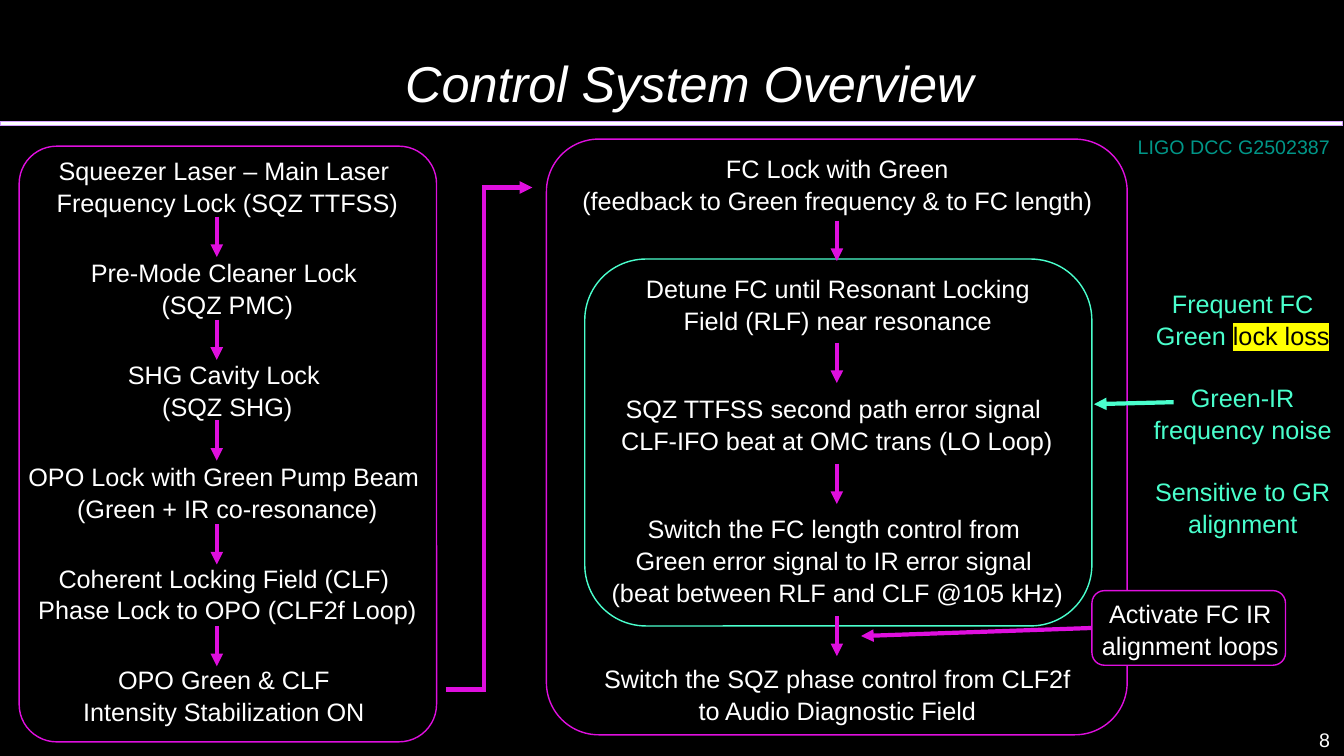
from dataclasses import dataclass

from lxml import etree
from pptx import Presentation
from pptx.dml.color import RGBColor
from pptx.enum.shapes import MSO_CONNECTOR, MSO_SHAPE
from pptx.enum.text import MSO_ANCHOR, PP_ALIGN
from pptx.oxml.ns import qn
from pptx.shapes.base import BaseShape
from pptx.slide import Slide
from pptx.text.text import TextFrame
from pptx.util import Emu, Pt

CENTER, RIGHT = PP_ALIGN.CENTER, PP_ALIGN.RIGHT
TOP, BOTTOM = MSO_ANCHOR.TOP, MSO_ANCHOR.BOTTOM
RECTANGLE, ROUNDED = MSO_SHAPE.RECTANGLE, MSO_SHAPE.ROUNDED_RECTANGLE
STRAIGHT = MSO_CONNECTOR.STRAIGHT

BLACK = RGBColor(0x00, 0x00, 0x00)
WHITE = RGBColor(0xFF, 0xFF, 0xFF)
MAGENTA = RGBColor(0xDF, 0x0F, 0xDE)
MINT = RGBColor(0x4A, 0xFF, 0xCD)
TEAL = RGBColor(0x00, 0x96, 0x88)
LILAC = RGBColor(0xD4, 0x9F, 0xFF)
YELLOW = RGBColor(0xFF, 0xFF, 0x00)

FONT = "Arial"
EMU_PER_PX = 9144  # 100 px to the inch
LINE_SPACING = 1.05
BLANK_LINE = Pt(21.7)


@dataclass(frozen=True)
class Label:
    left: int
    top: int
    width: int
    height: int
    text: str
    color: RGBColor = WHITE
    size: int = 18
    align: PP_ALIGN = CENTER
    anchor: MSO_ANCHOR = TOP
    spacing: float = LINE_SPACING


@dataclass(frozen=True)
class Line:
    start: tuple[int, int]
    end: tuple[int, int]
    color: RGBColor = MAGENTA
    arrow: bool = True


@dataclass(frozen=True)
class Panel:
    left: int
    top: int
    width: int
    height: int
    color: RGBColor = MAGENTA
    corner: float = 0.1667
    filled: bool = False


LOCK_STEPS = [
    "Squeezer Laser – Main Laser \nFrequency Lock (SQZ TTFSS)",
    "Pre-Mode Cleaner Lock \v(SQZ PMC)",
    "SHG Cavity Lock \v(SQZ SHG)",
    "OPO Lock with Green Pump Beam \v(Green + IR co-resonance)",
    "Coherent Locking Field (CLF) \vPhase Lock to OPO (CLF2f Loop)",
    "OPO Green & CLF \vIntensity Stabilization ON ",
]
STEP_TOP, STEP_PITCH = 148, 101

FILTER_CAVITY_STEPS = [
    Label(551, 146, 559, 71, "FC Lock with Green\n(feedback to Green frequency & to FC length)"),
    Label(628, 265, 406, 71, "Detune FC until Resonant Locking Field (RLF) near resonance"),
    Label(542, 384, 576, 71,
          "SQZ TTFSS second path error signal \vCLF-IFO beat at OMC trans (LO Loop)"),
    Label(578, 503, 505, 101, "Switch the FC length control from \vGreen error signal to IR error "
          "signal \v(beat between RLF and CLF @105 kHz)"),
    Label(578, 652, 505, 71, "Switch the SQZ phase control from CLF2f to Audio Diagnostic Field"),
]

ARROW_LENGTH = 40
ARROW_COLUMNS = {215: (215, 317, 417, 520, 621), 830: (219, 340, 460, 611)}

LINK_LINES = [
    Line((442, 684), (482, 684), arrow=False),
    Line((480, 684), (480, 184), arrow=False),
    Line((478, 186), (528, 186)),
]

PANELS = [
    Panel(19, 145, 414, 591, corner=0.09),
    Panel(542, 138, 576, 591, corner=0.09),
    Panel(1083, 586, 192, 74, filled=True),
    Panel(580, 257, 503, 364, MINT),
]

CALLOUT_LINES = [
    Line((1083, 623), (854, 631)),
    Line((1164, 399), (1085, 401), MINT),
]
ALIGNMENT_LABEL = Label(1073, 587, 215, 71, "Activate FC IR alignment loops")
ISSUES_LABEL = Label(1125, 280, 215, 252, "Frequent FC Green \nGreen-IR frequency noise\n"
                     "Sensitive to GR alignment", MINT)
REFERENCE = Label(1051, 129, 278, 34, "LIGO DCC G2502387", TEAL, 14, RIGHT, spacing=1.0)
PAGE_NUMBER = Label(1051, 700, 278, 50, "8", WHITE, 14, RIGHT, BOTTOM, 1.0)


def px(value: int) -> Emu:
    return Emu(value * EMU_PER_PX)


def place(shape: BaseShape, left: int, top: int, width: int, height: int) -> None:
    shape.left, shape.top, shape.width, shape.height = map(px, (left, top, width, height))


def add_label(slide: Slide, label: Label) -> TextFrame:
    box = slide.shapes.add_textbox(*map(px, (label.left, label.top, label.width, label.height)))
    frame = box.text_frame
    frame.word_wrap = True
    frame.vertical_anchor = label.anchor
    frame.text = label.text
    for paragraph in frame.paragraphs:
        paragraph.alignment = label.align
        paragraph.line_spacing = label.spacing
        for run in paragraph.runs:
            run.font.name = FONT
            run.font.size = Pt(label.size)
            run.font.color.rgb = label.color
    return frame


def add_line(slide: Slide, line: Line) -> None:
    connector = slide.shapes.add_connector(STRAIGHT, *map(px, line.start + line.end))
    connector.line.color.rgb = line.color
    connector.line.width = Pt(3)
    if line.arrow:
        outline = connector.line._get_or_add_ln()
        etree.SubElement(outline, qn("a:tailEnd"), type="triangle")
    etree.SubElement(connector._element.spPr, qn("a:effectLst"))


def add_panel(slide: Slide, panel: Panel) -> None:
    shape = slide.shapes.add_shape(
        ROUNDED, *map(px, (panel.left, panel.top, panel.width, panel.height)))
    shape.shadow.inherit = False
    shape.adjustments[0] = panel.corner
    shape.line.color.rgb = panel.color
    shape.line.width = Pt(1)
    if panel.filled:
        shape.fill.solid()
        shape.fill.fore_color.rgb = BLACK
    else:
        shape.fill.background()


def add_title(slide: Slide) -> None:
    title = slide.shapes.title
    place(title, 156, -8, 1056, 125)
    frame = title.text_frame
    frame.text = "Control System Overview"
    frame.vertical_anchor = BOTTOM
    paragraph = frame.paragraphs[0]
    paragraph.alignment = CENTER
    font = paragraph.runs[0].font
    font.name, font.size, font.italic = FONT, Pt(36), True
    font.color.rgb = WHITE


def add_title_rule(slide: Slide) -> None:
    rule = slide.shapes.add_shape(RECTANGLE, *map(px, (0, 121, 1332, 4)))
    rule.shadow.inherit = False
    rule.fill.solid()
    rule.fill.fore_color.rgb = WHITE
    rule.line.color.rgb = LILAC
    rule.line.width = Pt(0.75)


def add_issues(slide: Slide) -> None:
    """Add the list of known issues, with its key words highlighted."""
    frame = add_label(slide, ISSUES_LABEL)
    for paragraph in frame.paragraphs[1:]:
        paragraph.space_before = BLANK_LINE
    run = frame.paragraphs[0].add_run()
    run.text = "lock loss"
    run.font.size = Pt(ISSUES_LABEL.size)
    run.font.color.rgb = BLACK
    highlight = etree.Element(qn("a:highlight"))
    etree.SubElement(highlight, qn("a:srgbClr"), val=str(YELLOW))
    run.font._element.find(qn("a:solidFill")).addnext(highlight)
    run.font.name = FONT


def main() -> None:
    presentation = Presentation()
    presentation.slide_width, presentation.slide_height = px(1333), px(750)
    slide = presentation.slides.add_slide(presentation.slide_layouts[5])
    slide.background.fill.solid()
    slide.background.fill.fore_color.rgb = BLACK
    add_title_rule(slide)
    add_title(slide)
    for panel in PANELS:
        add_panel(slide, panel)
    steps = [Label(0, STEP_TOP + index * STEP_PITCH, 451, 71, text)
             for index, text in enumerate(LOCK_STEPS)]
    for label in [*steps, *FILTER_CAVITY_STEPS, ALIGNMENT_LABEL, REFERENCE, PAGE_NUMBER]:
        add_label(slide, label)
    step_arrows = [Line((x, top), (x, top + ARROW_LENGTH))
                   for x, tops in ARROW_COLUMNS.items() for top in tops]
    for line in step_arrows + LINK_LINES + CALLOUT_LINES:
        add_line(slide, line)
    add_issues(slide)
    presentation.save("out.pptx")


if __name__ == "__main__":
    main()
